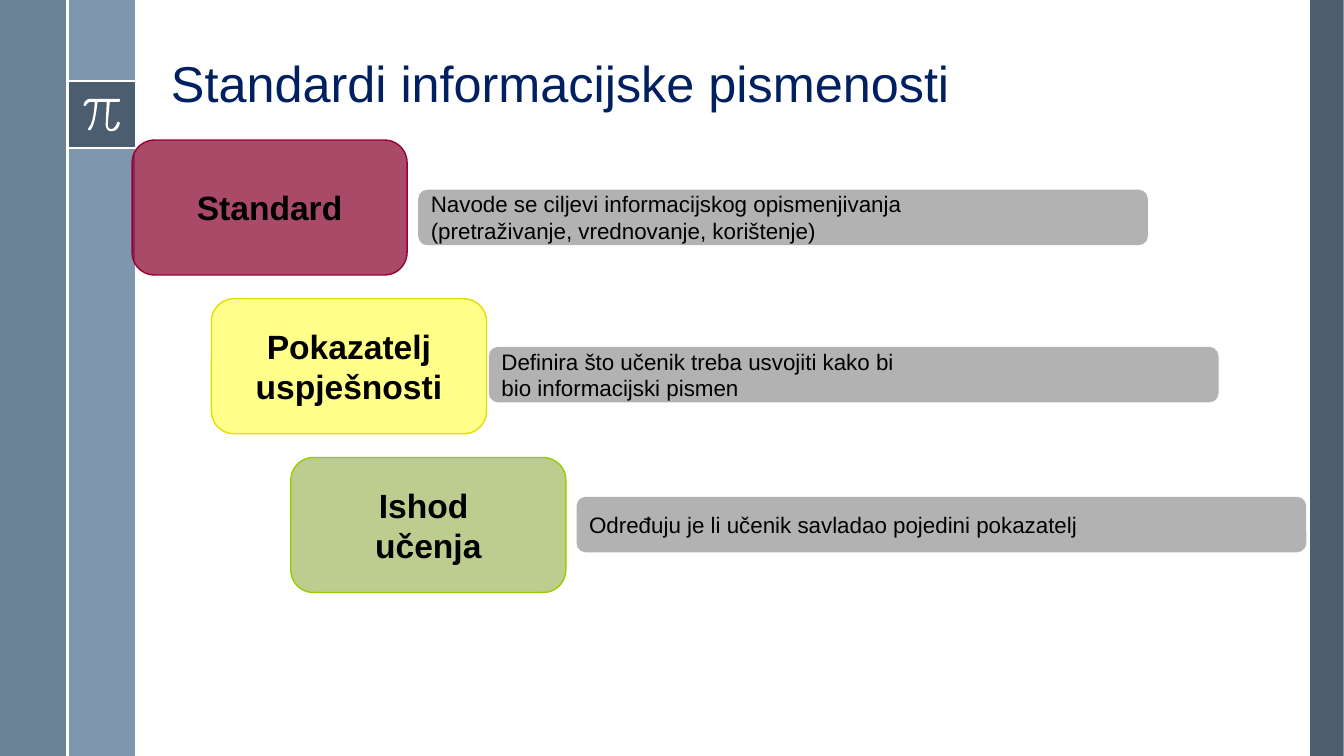
from dataclasses import dataclass

import pptx
import pptx.dml.color
import pptx.enum.shapes
import pptx.enum.text
import pptx.oxml
import pptx.oxml.ns
import pptx.util
from pptx.util import Cm

COLORS = {
    "white": "FFFFFF", "black": "000000", "title": "002060",
    "slate": "3A4C5B", "rail": "7E97AD", "edge": "577289", "bar": "B2B2B2",
    "wine": "86002D", "wine line": "990033",
    "yellow": "FFFF66", "yellow line": "E3DE00",
    "green": "698E00", "green line": "99CC00",
}
FONT = "Arial"
SHAPES = pptx.enum.shapes.MSO_SHAPE
ALIGN = pptx.enum.text.PP_ALIGN
ANCHOR = pptx.enum.text.MSO_ANCHOR

SLIDE_WIDTH, SLIDE_HEIGHT = 33.87, 19.05
RAIL = 1.7
TILE_TOP = 2.04
CARD_LEFT, CARD_TOP, CARD_WIDTH, CARD_HEIGHT = 3.33, 3.53, 6.93, 3.4
CARD_STEP_X, CARD_STEP_Y = 2, 4
BAR_WIDTH, BAR_HEIGHT = 18.39, 1.4

# Pi sign: pairs are straight ends, sextets are cubic curves
PI_UNIT = Cm(0.0254)
PI_START = (118, 98)
PI_OUTLINE = [
    (90, 98), (85, 98, 83, 103, 83, 104), (83, 104, 83, 105, 84, 105),
    (85, 105), (85, 105, 87, 101, 90, 101), (94, 101),
    (94, 105, 93, 122, 88, 127), (87, 128, 87, 128, 88, 129), (90, 129),
    (95, 123, 96, 105, 97, 101), (106, 101), (105, 122),
    (105, 122, 104, 126, 107, 129), (108, 130, 109, 130, 110, 130),
    (111, 130, 111, 130, 112, 130), (117, 130, 119, 123, 119, 122),
    (119, 122, 118, 121, 118, 121), (117, 121, 116, 121, 116, 122),
    (116, 122, 115, 127, 111, 128), (110, 128, 109, 128, 108, 127),
    (107, 126, 107, 123, 107, 122), (109, 101), (118, 101),
    (119, 101, 119, 100, 119, 100), (119, 99, 119, 98, 118, 98),
]


@dataclass
class Panel:
    left: float
    top: float
    width: float
    height: float
    color: str
    opacity: int = 100


@dataclass
class Level:
    lines: list[str]
    color: str
    opacity: int
    description: list[str]
    bar_left: float
    bar_top: float


PANELS = [
    Panel(33.02, 0, 0.84, SLIDE_HEIGHT, "slate", 90),
    Panel(RAIL, 0, RAIL, SLIDE_HEIGHT, "rail"),
    Panel(0, 0, RAIL, SLIDE_HEIGHT, "edge", 88),
    Panel(RAIL, TILE_TOP, RAIL, RAIL, "slate", 75),
]
LEVELS = [
    Level(["Standard"], "wine", 71,
          ["Navode se ciljevi informacijskog opismenjivanja",
           "(pretraživanje, vrednovanje, korištenje)"], 10.54, 4.78),
    Level(["Pokazatelj", "uspješnosti"], "yellow", 77,
          ["Definira što učenik treba usvojiti kako bi",
           "bio informacijski pismen"], 12.32, 8.74),
    Level(["Ishod ", "učenja"], "green", 44,
          ["Određuju je li učenik savladao pojedini pokazatelj"], 14.53, 12.52),
]


def rgb(name: str) -> pptx.dml.color.RGBColor:
    return pptx.dml.color.RGBColor.from_string(COLORS[name])


def add_panel(slide, panel: Panel, kind=SHAPES.RECTANGLE):
    shape = slide.shapes.add_shape(kind, Cm(panel.left), Cm(panel.top),
                                   Cm(panel.width), Cm(panel.height))
    shape.shadow.inherit = False
    shape.fill.solid()
    shape.fill.fore_color.rgb = rgb(panel.color)
    shape.line.fill.background()
    if panel.opacity < 100:
        color = shape.fill._xPr.find(".//" + pptx.oxml.ns.qn("a:srgbClr"))
        alpha = color.makeelement(pptx.oxml.ns.qn("a:alpha"),
                                  {"val": str(panel.opacity * 1000)})
        color.append(alpha)
    return shape


def write_text(shape, lines: list[str], size: int, color: str = "black",
               bold: bool = False, align=ALIGN.LEFT, anchor=ANCHOR.MIDDLE) -> None:
    frame = shape.text_frame
    frame.word_wrap = True
    frame.vertical_anchor = anchor
    frame.text = "\n".join(lines)
    for paragraph in frame.paragraphs:
        paragraph.alignment = align
        paragraph.font.name = FONT
        paragraph.font.size = pptx.util.Pt(size)
        paragraph.font.bold = bold
        paragraph.font.color.rgb = rgb(color)


def add_white_line(slide, x1: float, y1: float, x2: float, y2: float) -> None:
    line = slide.shapes.add_connector(pptx.enum.shapes.MSO_CONNECTOR.STRAIGHT,
                                      Cm(x1), Cm(y1), Cm(x2), Cm(y2))
    line.line.color.rgb = rgb("white")
    line.line.width = pptx.util.Pt(1.5)
    properties = line._element.spPr
    properties.append(properties.makeelement(pptx.oxml.ns.qn("a:effectLst"), {}))


def pi_points(steps: int = 6) -> list[tuple[float, float]]:
    points = []
    current = PI_START
    for segment in PI_OUTLINE:
        end = segment[-2:]
        if len(segment) == 2:
            points.append(end)
        else:
            controls = (current, segment[:2], segment[2:4], end)
            for step in range(1, steps + 1):
                t = step / steps
                weights = ((1 - t) ** 3, 3 * t * (1 - t) ** 2,
                           3 * t ** 2 * (1 - t), t ** 3)
                points.append(tuple(
                    sum(w * p[axis] for w, p in zip(weights, controls))
                    for axis in (0, 1)))
        current = end
    return points


def add_pi(slide) -> None:
    builder = slide.shapes.build_freeform(
        PI_START[0] * PI_UNIT, PI_START[1] * PI_UNIT)
    builder.add_line_segments(
        [(round(x * PI_UNIT), round(y * PI_UNIT)) for x, y in pi_points()])
    sign = builder.convert_to_shape()
    sign.shadow.inherit = False
    sign.fill.solid()
    sign.fill.fore_color.rgb = rgb("white")
    sign.line.fill.background()


def main() -> None:
    presentation = pptx.Presentation()
    presentation.slide_width = Cm(SLIDE_WIDTH)
    presentation.slide_height = Cm(SLIDE_HEIGHT)
    slide = presentation.slides.add_slide(presentation.slide_layouts[6])

    # Side decoration
    for panel in PANELS:
        add_panel(slide, panel)
    for y in (TILE_TOP, TILE_TOP + RAIL):
        add_white_line(slide, RAIL, y, 2 * RAIL, y)
    add_pi(slide)
    add_white_line(slide, RAIL, 0, RAIL, SLIDE_HEIGHT)

    # Title
    title = slide.shapes.add_textbox(Cm(4.06), Cm(0.97), Cm(26.67), Cm(2.01))
    write_text(title, ["Standardi informacijske pismenosti"], 36, "title",
               anchor=ANCHOR.BOTTOM)
    title.text_frame.paragraphs[0].line_spacing = 0.9

    # Descriptions, behind the cards
    for level in LEVELS:
        bar = add_panel(slide, Panel(level.bar_left, level.bar_top, BAR_WIDTH,
                                     BAR_HEIGHT, "bar"), SHAPES.ROUNDED_RECTANGLE)
        write_text(bar, level.description, 16)

    # Staircase of cards
    for index, level in enumerate(LEVELS):
        card = add_panel(slide, Panel(
            CARD_LEFT + index * CARD_STEP_X, CARD_TOP + index * CARD_STEP_Y,
            CARD_WIDTH, CARD_HEIGHT, level.color, level.opacity),
            SHAPES.ROUNDED_RECTANGLE)
        card.line.color.rgb = rgb(level.color + " line")
        card.line.width = pptx.util.Pt(1)
        write_text(card, level.lines, 24, bold=True, align=ALIGN.CENTER)

    presentation.save("out.pptx")


if __name__ == "__main__":
    main()
